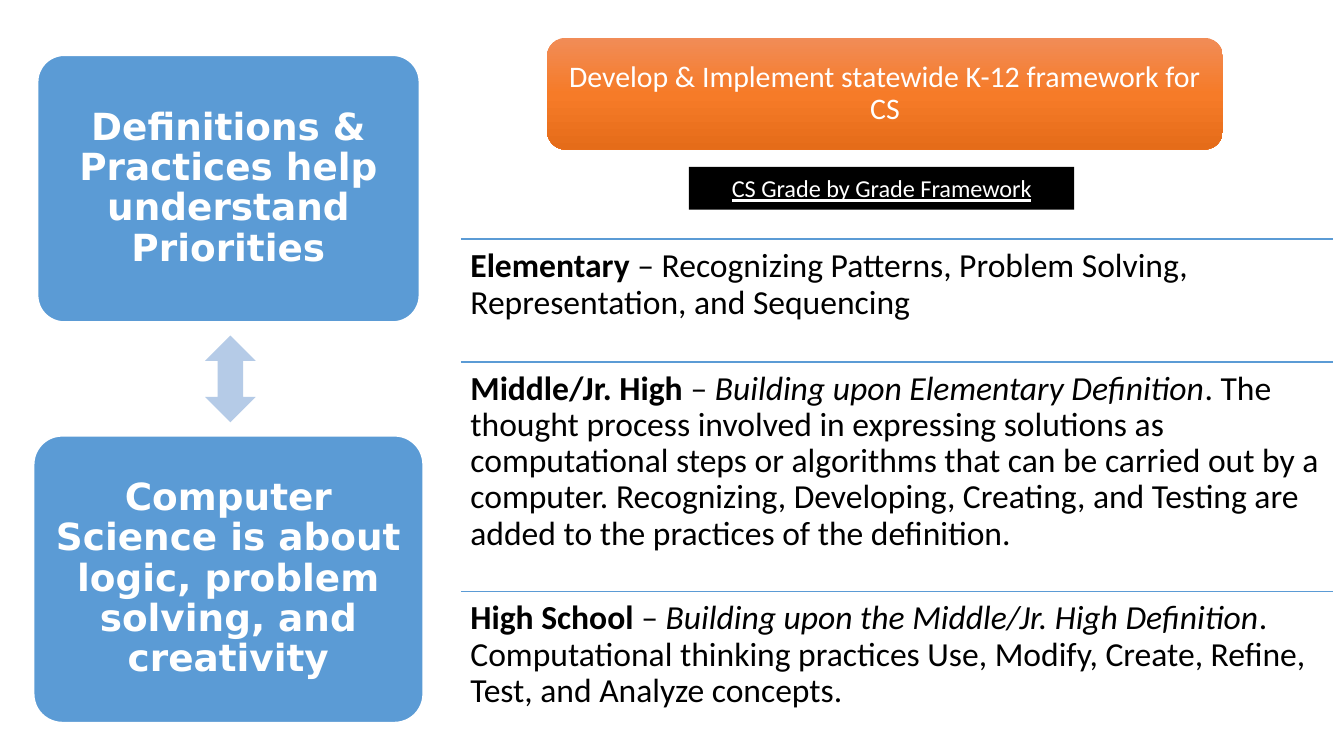
from copy import deepcopy
from itertools import accumulate

from lxml import etree
from pptx import Presentation
from pptx import util as u
from pptx.dml.color import RGBColor
from pptx.enum import shapes, text
from pptx.oxml.ns import qn

WIDE, HIGH = u.Inches(10), u.Inches(5.625)
WHITE, BLACK, BLUE, PALE = "FFFFFF", "000000", "5B9BD5", "B5CBE7"
SHAPE = shapes.MSO_SHAPE


def tint(code):
    return RGBColor.from_string(code)


def frame(x, y, w, h):
    """Box from percentages of the slide's width and height."""
    return [int(n * side / 100) for n, side in
            zip((x, y, w, h), (WIDE, HIGH, WIDE, HIGH))]


def part(box, x, y, w, h):
    """Box from shares of another box."""
    left, top, wide, high = box
    return [int(left + x * wide), int(top + y * high),
            int(w * wide), int(h * high)]


def write(shape, runs, size, font="Calibri", color=BLACK, center=True,
          pad=0.07, space=0.9, under=False):
    """Fill a shape with (words, style) runs; style holds b and i."""
    body = shape.text_frame
    body.word_wrap = True
    body.margin_left = body.margin_right = u.Inches(pad)
    body.margin_top = body.margin_bottom = u.Inches(pad)
    body.vertical_anchor = (text.MSO_ANCHOR.MIDDLE if center
                            else text.MSO_ANCHOR.TOP)
    para = body.paragraphs[0]
    para.alignment = text.PP_ALIGN.CENTER if center else text.PP_ALIGN.LEFT
    para.line_spacing = space
    for words, style in runs:
        run = para.add_run()
        run.text = words
        face = run.font
        face.name, face.size = font, u.Pt(size)
        face.bold, face.italic = "b" in style, "i" in style
        face.underline = under
        face.color.rgb = tint(color)


def block(slide, kind, box, fill, edge=None, adjust=()):
    shape = slide.shapes.add_shape(kind, *box)
    shape.shadow.inherit = False
    shape.fill.solid()
    shape.fill.fore_color.rgb = tint(fill)
    if edge:
        shape.line.color.rgb = tint(edge)
        shape.line.width = u.Pt(1)
    else:
        shape.line.fill.background()
    for at, value in enumerate(adjust):
        shape.adjustments[at] = value
    return shape


def shade(shape, colors):
    """Top-to-bottom gradient with evenly spaced colours."""
    fill = shape.fill
    fill.gradient()
    fill.gradient_angle = 270
    stops = shape._element.spPr.find(qn("a:gradFill")).find(qn("a:gsLst"))
    while len(stops) < len(colors):
        stops.append(deepcopy(stops[0]))
    for at, (stop, color) in enumerate(zip(fill.gradient_stops, colors)):
        stop.position = at / (len(colors) - 1)
        stop.color.rgb = tint(color)


def rule(slide, x, y, wide):
    line = slide.shapes.add_connector(
        shapes.MSO_CONNECTOR.STRAIGHT, x, y, x + wide, y)
    line.line.color.rgb = tint(BLUE)
    line.line.width = u.Pt(1)
    etree.SubElement(line._element.spPr, qn("a:effectLst"))


def header(slide, box):
    goal = block(slide, SHAPE.ROUNDED_RECTANGLE, part(box, 0, 0, 1, 0.65),
                 "F67B28")
    shade(goal, ["F18C57", "F67B28", "E56C19"])
    write(goal, [("Develop & Implement statewide K-12 framework for CS", "")],
          16, color=WHITE)
    label = block(slide, SHAPE.RECTANGLE, part(box, 0.21, 0.75, 0.57, 0.25),
                  BLACK)
    write(label, [("CS Grade by Grade Framework", "")], 13, color=WHITE,
          pad=0.05, space=1.0, under=True)


def levels(slide, box, rows):
    """Ruled rows of text, each as high as its weight."""
    total = sum(weight for weight, _ in rows)
    ends = accumulate(weight / total for weight, _ in rows)
    for (weight, runs), end in zip(rows, ends):
        share = weight / total
        cell = part(box, 0, end - share, 1, share)
        rule(slide, *cell[:3])
        write(slide.shapes.add_textbox(*cell), runs, 18, center=False)


def ideas(slide, box, first, second):
    """Two linked cards, one above the other."""
    cards = [(first, (0.01, 0, 0.98, 0.4)), (second, (0, 0.57, 1, 0.43))]
    for words, place in cards:
        card = block(slide, SHAPE.ROUNDED_RECTANGLE, part(box, *place),
                     BLUE, edge=WHITE, adjust=[0.1])
        write(card, [(words, "b")], 20, font="DejaVu Sans", color=WHITE,
              pad=0.08)
    block(slide, SHAPE.UP_DOWN_ARROW, part(box, 0.44, 0.42, 0.13, 0.13),
          PALE, adjust=[0.6, 0.5])


ROWS = [
    (0.91, [("Elementary", "b"),
            (" – Recognizing Patterns, Problem Solving, Representation, "
             "and Sequencing", "")]),
    (1.71, [("Middle/Jr. High ", "b"), ("– ", ""),
            ("Building upon Elementary Definition", "i"),
            (". The thought process involved in expressing solutions as "
             "computational steps or algorithms that can be carried out by "
             "a computer. Recognizing, Developing, Creating, and Testing "
             "are added to the practices of the definition.", "")]),
    (1.13, [("High School ", "b"), ("– ", ""),
            ("Building upon the Middle/Jr. High Definition", "i"),
            (". Computational thinking practices Use, Modify, Create, "
             "Refine, Test, and Analyze concepts.", "")]),
]


def main():
    deck = Presentation()
    deck.slide_width, deck.slide_height = WIDE, HIGH
    slide = deck.slides.add_slide(deck.slide_layouts[6])
    header(slide, frame(40.7, 5, 50.3, 22.75))
    levels(slide, frame(34.3, 31.65, 64.9, 66.7), ROWS)
    ideas(slide, frame(2.5, 7.3, 29, 88.3),
          "Definitions & Practices help understand Priorities",
          "Computer Science is about logic, problem solving, and creativity")
    deck.save("out.pptx")


if __name__ == "__main__":
    main()
